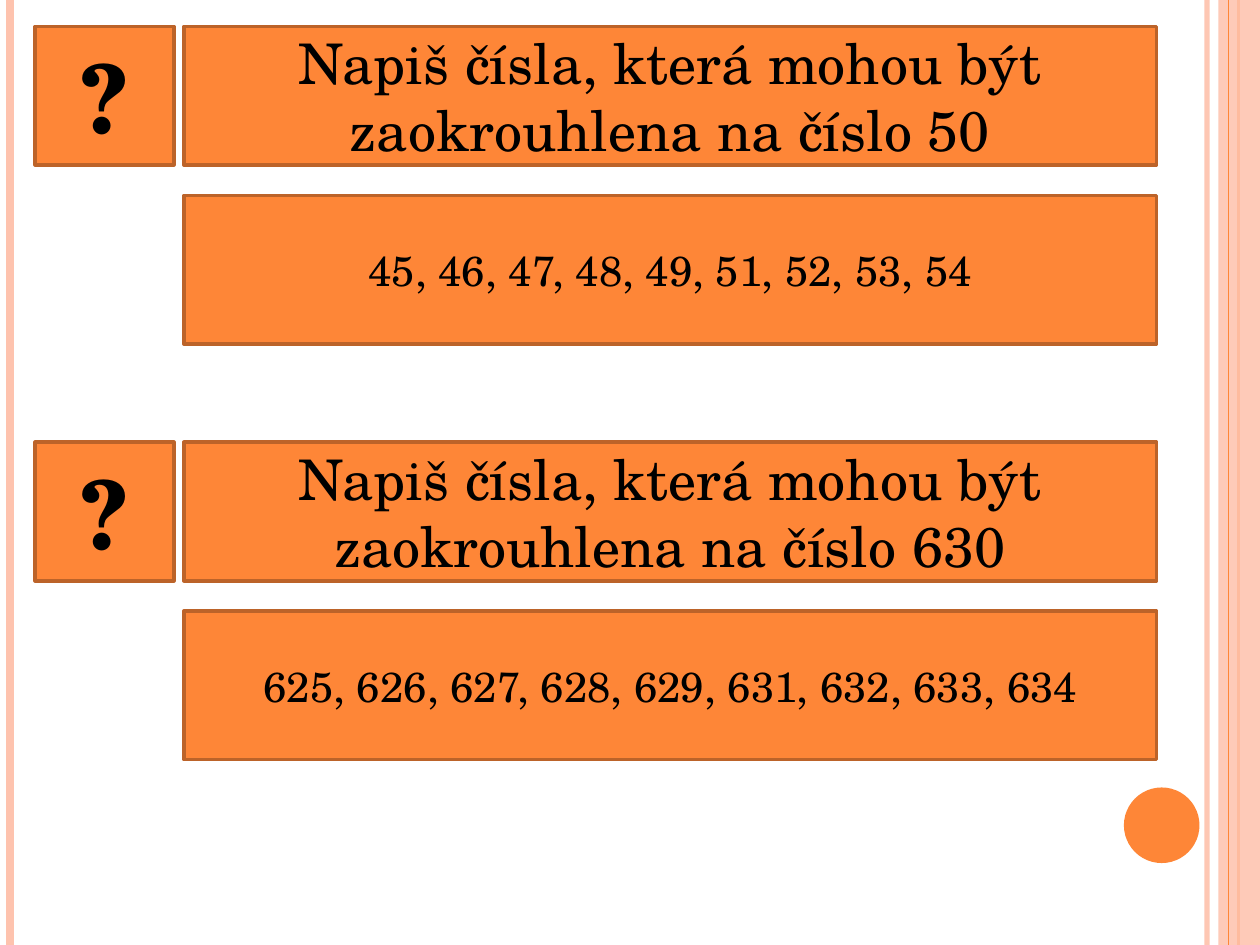
from dataclasses import dataclass

from lxml import etree
from pptx import Presentation
from pptx.dml.color import RGBColor
from pptx.enum.shapes import MSO_CONNECTOR, MSO_SHAPE
from pptx.enum.text import MSO_ANCHOR, PP_ALIGN
from pptx.oxml.ns import qn
from pptx.shapes.autoshape import Shape
from pptx.slide import Slide
from pptx.util import Inches, Pt

FONT = "TeX Gyre Schola"
ORANGE, BROWN, PEACH, BLACK = "FE8637", "BC6329", "FEC3AE", "000000"
SLIDE_WIDTH, SLIDE_HEIGHT = 10, 7.5
MARK_LEFT, MARK_SIZE = 0.28, 1.1
TEXT_LEFT, TEXT_WIDTH = 1.46, 7.72
ANSWER_OFFSET, ANSWER_HEIGHT = 1.34, 1.18
FIRST_TOP, EXERCISE_STEP = 0.21, 3.3


@dataclass
class Exercise:
    number: int
    answer: str


@dataclass
class Stripe:
    x: float
    color: str
    width: float
    opacity: int = 100


EXERCISES = [
    Exercise(50, "45, 46, 47, 48, 49, 51, 52, 53, 54"),
    Exercise(630, "625, 626, 627, 628, 629, 631, 632, 633, 634"),
]
STRIPES_BEHIND_BAND = [
    Stripe(9.58, PEACH, 3, 93),
    Stripe(0.08, PEACH, 4.5),
    Stripe(9.83, ORANGE, 1.5),
]
STRIPE_ON_BAND = Stripe(9.75, ORANGE, 0.75)


def set_color(fill, color: str, opacity: int = 100) -> None:
    """Make a fill solid, with opacity in percent."""
    fill.solid()
    fill.fore_color.rgb = RGBColor.from_string(color)
    if opacity < 100:
        element = fill._xPr.find(qn("a:solidFill"))[0]
        etree.SubElement(element, qn("a:alpha"), val=str(opacity * 1000))


def add_stripe(slide: Slide, stripe: Stripe) -> None:
    x = Inches(stripe.x)
    connector = slide.shapes.add_connector(
        MSO_CONNECTOR.STRAIGHT, x, 0, x, Inches(SLIDE_HEIGHT)
    )
    connector.line.width = Pt(stripe.width)
    set_color(connector.line.fill, stripe.color, stripe.opacity)
    etree.SubElement(connector._element.spPr, qn("a:effectLst"))


def add_figure(slide: Slide, kind: MSO_SHAPE, left: float, top: float, width: float,
               height: float, color: str = ORANGE, opacity: int = 100) -> Shape:
    """Add a filled shape without line or shadow."""
    shape = slide.shapes.add_shape(
        kind, Inches(left), Inches(top), Inches(width), Inches(height)
    )
    shape.shadow.inherit = False
    set_color(shape.fill, color, opacity)
    shape.line.fill.background()
    return shape


def write(shape: Shape, text: str, *, size: float, bold: bool = False,
          color: str = BLACK) -> None:
    frame = shape.text_frame
    frame.word_wrap = True
    frame.vertical_anchor = MSO_ANCHOR.MIDDLE
    paragraph = frame.paragraphs[0]
    paragraph.alignment = PP_ALIGN.CENTER
    run = paragraph.add_run()
    run.text = text
    run.font.name = FONT
    run.font.size = Pt(size)
    run.font.bold = bold
    set_color(run.font.fill, color)


def add_box(slide: Slide, left: float, top: float, width: float, height: float,
            text: str, *, size: float, bold: bool = False) -> None:
    box = add_figure(slide, MSO_SHAPE.RECTANGLE, left, top, width, height)
    set_color(box.line.fill, BROWN)
    box.line.width = Pt(2)
    write(box, text, size=size, bold=bold)


def add_exercise(slide: Slide, exercise: Exercise, top: float) -> None:
    question = f"Napiš čísla, která mohou být zaokrouhlena na číslo {exercise.number}"
    add_box(slide, MARK_LEFT, top, MARK_SIZE, MARK_SIZE, "?", size=54, bold=True)
    add_box(slide, TEXT_LEFT, top, TEXT_WIDTH, MARK_SIZE, question, size=32)
    add_box(slide, TEXT_LEFT, top + ANSWER_OFFSET, TEXT_WIDTH, ANSWER_HEIGHT,
            exercise.answer, size=24)


def add_decoration(slide: Slide) -> None:
    for stripe in STRIPES_BEHIND_BAND:
        add_stripe(slide, stripe)
    add_figure(slide, MSO_SHAPE.RECTANGLE, 9.67, 0, 0.33, SLIDE_HEIGHT, PEACH, 87)
    add_stripe(slide, STRIPE_ON_BAND)
    add_figure(slide, MSO_SHAPE.OVAL, 8.92, 6.25, 0.6, 0.6)


def main() -> None:
    presentation = Presentation()
    presentation.slide_width = Inches(SLIDE_WIDTH)
    presentation.slide_height = Inches(SLIDE_HEIGHT)
    slide = presentation.slides.add_slide(presentation.slide_layouts[6])
    add_decoration(slide)
    for index, exercise in enumerate(EXERCISES):
        add_exercise(slide, exercise, FIRST_TOP + index * EXERCISE_STEP)
    presentation.save("out.pptx")


if __name__ == "__main__":
    main()
